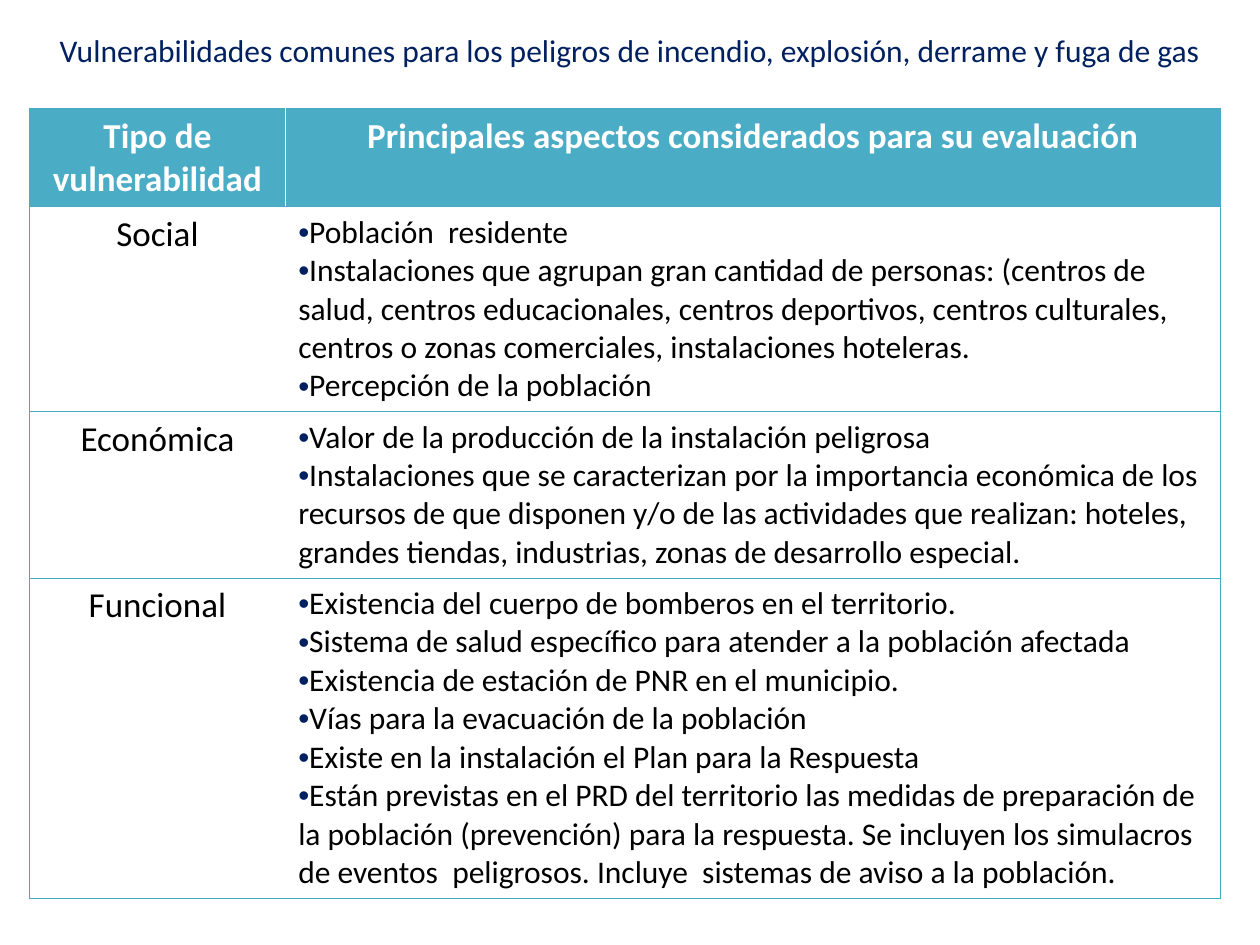
from lxml.etree import SubElement
from pptx import Presentation
from pptx.dml.color import RGBColor
from pptx.enum.text import MSO_ANCHOR as Anchor, PP_ALIGN as Align
from pptx.oxml.ns import qn
from pptx.util import Pt

NAVY, TEAL, BORDER = "002060", "4BACC6", "46AAC5"
WHITE, BLACK = "FFFFFF", "000000"

TITLE = "Vulnerabilidades comunes para los peligros de incendio, explosión, derrame y fuga de gas"
HEADERS = ["Tipo de vulnerabilidad", "Principales aspectos considerados para su evaluación"]
ASPECTS = {
    "Social": [
        "Población  residente",
        "Instalaciones que agrupan gran cantidad de personas: (centros de salud, centros "
        "educacionales, centros deportivos, centros culturales, centros o zonas comerciales, "
        "instalaciones hoteleras.",
        "Percepción de la población",
    ],
    "Económica": [
        "Valor de la producción de la instalación peligrosa",
        "Instalaciones que se caracterizan por la importancia económica de los recursos de que "
        "disponen y/o de las actividades que realizan: hoteles, grandes tiendas, industrias, "
        "zonas de desarrollo especial.",
    ],
    "Funcional": [
        "Existencia del cuerpo de bomberos en el territorio.",
        "Sistema de salud específico para atender a la población afectada",
        "Existencia de estación de PNR en el municipio.",
        "Vías para la evacuación de la población",
        "Existe en la instalación el Plan para la Respuesta",
        "Están previstas en el PRD del territorio las medidas de preparación de la población "
        "(prevención) para la respuesta. Se incluyen los simulacros de eventos  peligrosos. "
        "Incluye  sistemas de aviso a la población.",
    ],
}
COLUMN_WIDTHS = [146.5, 534]
ROW_HEIGHTS = [56, 117, 95, 183]

TITLE_FORMAT = {"size": Pt(18), "bold": False, "color": NAVY}
HEADER_FORMAT = {"size": Pt(20), "bold": True, "color": WHITE}
TYPE_FORMAT = {"size": Pt(20), "bold": False, "color": BLACK}
ASPECT_FORMAT = {"size": Pt(18), "bold": False, "color": BLACK}


def rgb(color):
    return RGBColor.from_string(color)


def write_paragraph(paragraph, text, values, align):
    paragraph.alignment = align
    run = paragraph.add_run()
    run.text = text
    run.font.name = "Calibri"
    for name, value in values.items():
        if name == "color":
            run.font.color.rgb = rgb(value)
        else:
            setattr(run.font, name, value)


def add_bullet(paragraph):
    """Put a navy bullet directly before the text, without a hanging indent."""
    properties = paragraph._p.get_or_add_pPr()
    properties.set("marL", "0")
    properties.set("indent", "0")
    color = SubElement(properties, qn("a:buClr"))
    SubElement(color, qn("a:srgbClr"), val=NAVY)
    SubElement(properties, qn("a:buFont"), typeface="Arial")
    SubElement(properties, qn("a:buChar"), char="•")


def add_borders(cell, sides):
    """Draw the given sides, which must come in the order L, R, T, B."""
    properties = cell._tc.get_or_add_tcPr()
    for side in sides:
        line = SubElement(properties, qn(f"a:ln{side}"), w=str(Pt(0.75)))
        fill = SubElement(line, qn("a:solidFill"))
        SubElement(fill, qn("a:srgbClr"), val=BORDER)


def fill_cell(cell, texts, values, fill, sides, align=Align.CENTER, bulleted=False):
    add_borders(cell, sides)
    cell.fill.solid()
    cell.fill.fore_color.rgb = rgb(fill)
    cell.margin_left = cell.margin_right = Pt(7.2)
    cell.margin_top = cell.margin_bottom = Pt(3.6)
    frame = cell.text_frame
    for index, text in enumerate(texts):
        paragraph = frame.add_paragraph() if index else frame.paragraphs[0]
        write_paragraph(paragraph, text, values, align)
        if bulleted:
            add_bullet(paragraph)


def add_title(slide):
    title = slide.shapes.title
    box = {"left": Pt(0), "top": Pt(11.5), "width": Pt(720), "height": Pt(34.5)}
    for name, value in box.items():
        setattr(title, name, value)
    title.text_frame.vertical_anchor = Anchor.MIDDLE
    write_paragraph(title.text_frame.paragraphs[0], TITLE, TITLE_FORMAT, Align.CENTER)


def add_vulnerability_table(slide):
    frame = slide.shapes.add_table(
        len(ROW_HEIGHTS), len(COLUMN_WIDTHS), Pt(16.75), Pt(62),
        Pt(sum(COLUMN_WIDTHS)), Pt(sum(ROW_HEIGHTS)))
    table = frame.table
    table.horz_banding = False
    for column, width in zip(table.columns, COLUMN_WIDTHS):
        column.width = Pt(width)
    for row, height in zip(table.rows, ROW_HEIGHTS):
        row.height = Pt(height)

    outer_sides = "L", "R"
    for column, (header, side) in enumerate(zip(HEADERS, outer_sides)):
        fill_cell(table.cell(0, column), [header], HEADER_FORMAT, TEAL, side + "TB")
    for row, (kind, aspects) in enumerate(ASPECTS.items(), start=1):
        fill_cell(table.cell(row, 0), [kind], TYPE_FORMAT, WHITE, "LTB")
        fill_cell(table.cell(row, 1), aspects, ASPECT_FORMAT, WHITE, "RTB",
                  align=Align.LEFT, bulleted=True)


def main():
    presentation = Presentation()
    presentation.slide_width, presentation.slide_height = Pt(720), Pt(540)
    slide = presentation.slides.add_slide(presentation.slide_layouts[5])
    add_title(slide)
    add_vulnerability_table(slide)
    presentation.save("out.pptx")


if __name__ == "__main__":
    main()
